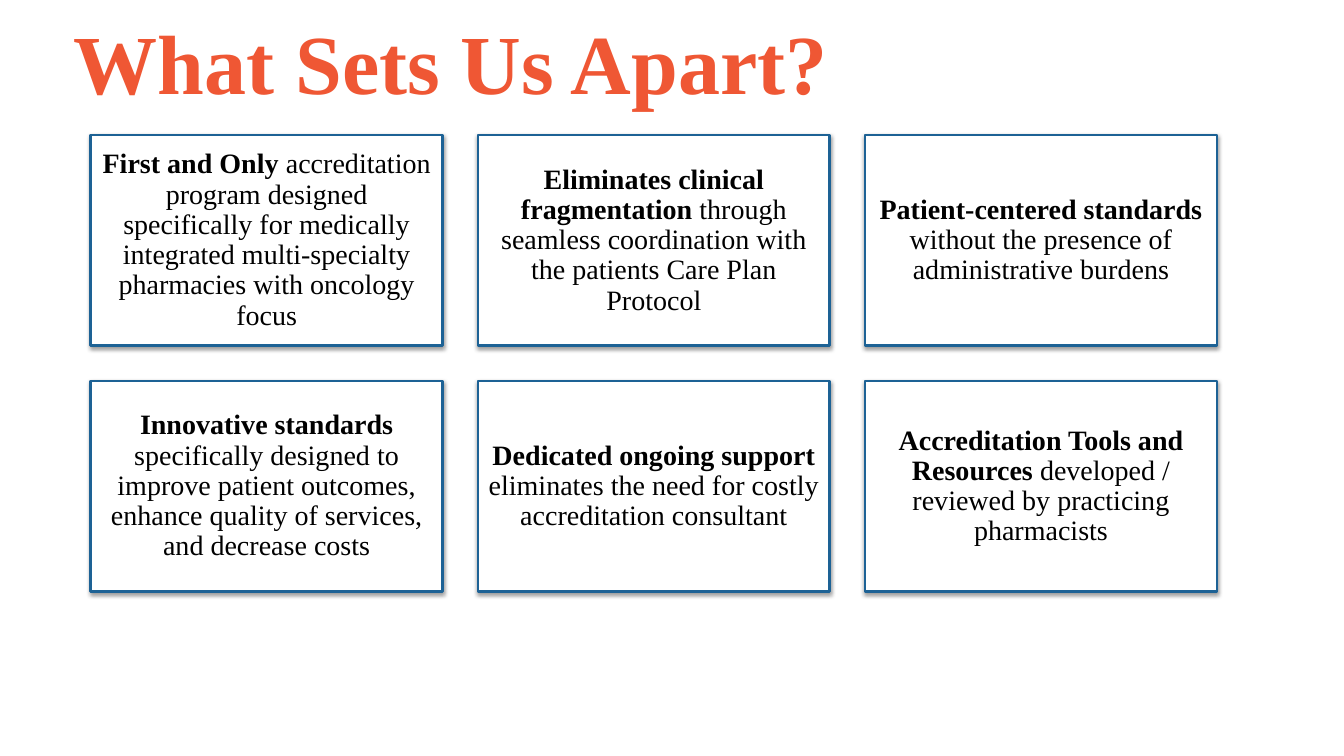
from lxml import etree
from pptx import Presentation
from pptx import util as u
from pptx.dml.color import RGBColor
from pptx.enum import shapes, text
from pptx.oxml import ns

COLORS = {"title": "EF5734", "border": "1D6295", "card": "FFFFFF",
          "body": "000000", "shadow": "000000"}
FONT = "Times New Roman"
CARDS = [
    ("First and Only ", "accreditation program designed specifically for medically "
     "integrated multi-specialty pharmacies with oncology focus"),
    ("Eliminates clinical fragmentation ",
     "through seamless coordination with the patients Care Plan Protocol"),
    ("Patient-centered standards ", "without the presence of administrative burdens"),
    ("Innovative standards ", "specifically designed to improve patient outcomes, "
     "enhance quality of services, and decrease costs"),
    ("Dedicated ongoing support",
     " eliminates the need for costly accreditation consultant"),
    ("Accreditation Tools and Resources ",
     "developed / reviewed by practicing pharmacists"),
]
COLUMNS = 3
LEFT, TOP, WIDTH, HEIGHT, GAP = 0.9, 1.34, 3.49, 2.09, 0.35


def add_run(paragraph, words, size, color, bold):
    run = paragraph.add_run()
    run.text = words
    for name, value in {"name": FONT, "size": u.Pt(size), "bold": bold}.items():
        setattr(run.font, name, value)
    run.font.color.rgb = RGBColor.from_string(COLORS[color])


def add_soft_shadow(shape):
    shape.shadow.inherit = False
    effects = shape._element.spPr.find(ns.qn("a:effectLst"))
    outer = etree.SubElement(effects, ns.qn("a:outerShdw"), blurRad=str(u.Pt(3.1)),
                             dist=str(u.Pt(1.6)), dir="5400000", rotWithShape="0")
    color = etree.SubElement(outer, ns.qn("a:srgbClr"), val=COLORS["shadow"])
    etree.SubElement(color, ns.qn("a:alpha"), val="38000")


presentation = Presentation()
presentation.slide_width = u.Inches(13.33)
presentation.slide_height = u.Inches(7.5)
slide = presentation.slides.add_slide(presentation.slide_layouts[5])

title = slide.shapes.title
for name, value in {"left": 0.73, "top": 0, "width": 11.5, "height": 1.45}.items():
    setattr(title, name, u.Inches(value))
frame = title.text_frame
frame.vertical_anchor = text.MSO_ANCHOR.TOP
frame.auto_size = text.MSO_AUTO_SIZE.NONE
for side, inset in {"left": 0, "top": 0.1, "right": 0, "bottom": 0}.items():
    setattr(frame, f"margin_{side}", u.Inches(inset))
frame.paragraphs[0].alignment = text.PP_ALIGN.LEFT
add_run(frame.paragraphs[0], "What Sets Us Apart?", 60, "title", True)

for index, (lead, detail) in enumerate(CARDS):
    row, column = divmod(index, COLUMNS)
    card = slide.shapes.add_shape(
        shapes.MSO_SHAPE.RECTANGLE,
        u.Inches(LEFT + column * (WIDTH + GAP)), u.Inches(TOP + row * (HEIGHT + GAP)),
        u.Inches(WIDTH), u.Inches(HEIGHT))
    card.fill.solid()
    card.fill.fore_color.rgb = RGBColor.from_string(COLORS["card"])
    card.line.color.rgb = RGBColor.from_string(COLORS["border"])
    card.line.width = u.Pt(2)
    add_soft_shadow(card)

    frame = card.text_frame
    frame.word_wrap = True
    frame.vertical_anchor = text.MSO_ANCHOR.MIDDLE
    for side in ("left", "top", "right", "bottom"):
        setattr(frame, f"margin_{side}", u.Inches(0.08))
    paragraph = frame.paragraphs[0]
    paragraph.alignment = text.PP_ALIGN.CENTER
    paragraph.line_spacing = 0.9
    add_run(paragraph, lead, 20, "body", True)
    add_run(paragraph, detail, 20, "body", False)

presentation.save("out.pptx")
